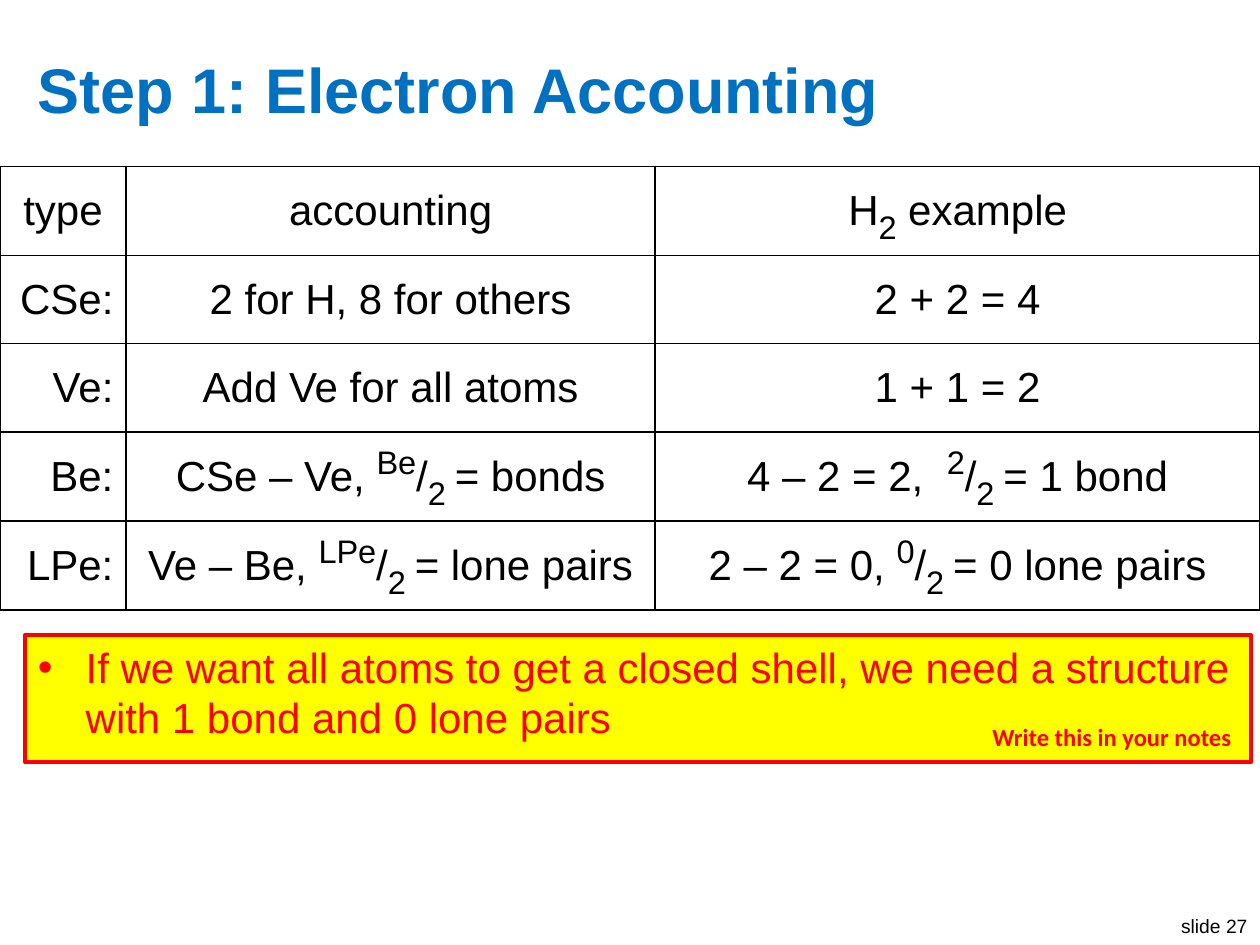
from lxml import etree
from pptx import Presentation
from pptx.dml.color import RGBColor
from pptx.enum import shapes, text
from pptx.oxml import ns
from pptx.util import Inches, Pt

BLACK, WHITE, RED, YELLOW, BLUE = "000000", "FFFFFF", "FF0000", "FFFF00", "0070C0"
LEFT, CENTER, RIGHT = text.PP_ALIGN.LEFT, text.PP_ALIGN.CENTER, text.PP_ALIGN.RIGHT

# A run starting with ^ is raised, one starting with _ is lowered
BASELINES = {"^": "30000", "_": "-25000"}
COLUMNS = [1, 4.2, 4.8]
ROW_HEIGHT = 0.7
ROWS = [
    (["type"], ["accounting"], ["H", "_2", " example"]),
    (["CSe:"], ["2 for H, 8 for others"], ["2 + 2 = 4"]),
    (["Ve:"], ["Add Ve for all atoms"], ["1 + 1 = 2"]),
    (["Be:"], ["CSe – Ve, ", "^Be", "/", "_2 ", "= bonds"],
     ["4 – 2 = 2,  ", "^2", "/", "_2 ", "= 1 bond"]),
    (["LPe:"], ["Ve – Be, ", "^LPe", "/", "_2 ", "= lone pairs"],
     ["2 – 2 = 0, ", "^0", "/", "_2 ", "= 0 lone pairs"]),
]


def rgb(color):
    return RGBColor.from_string(color)


def place(sp, box):
    sp.left, sp.top, sp.width, sp.height = (Inches(v) for v in box)


def fill(target, color):
    target.fill.solid()
    target.fill.fore_color.rgb = rgb(color)


def format_run(r, size, color, font="Arial", bold=False):
    r.font.size, r.font.name, r.font.bold = Pt(size), font, bold
    r.font.color.rgb = rgb(color)


def write(tf, words, size, color, align=LEFT, font="Arial", bold=False):
    tf.text = words
    p = tf.paragraphs[0]
    p.alignment = align
    format_run(p.runs[0], size, color, font, bold)
    return p


def add_title(slide, box):
    sp = slide.shapes.title
    place(sp, box)
    tf = sp.text_frame
    write(tf, "Step 1: Electron Accounting", 36, BLUE, bold=True)
    tf.vertical_anchor = text.MSO_ANCHOR.MIDDLE
    tf.auto_size = text.MSO_AUTO_SIZE.NONE


def set_borders(cell):
    tc_pr = cell._tc.get_or_add_tcPr()
    for i, side in enumerate(("lnL", "lnR", "lnT", "lnB")):
        ln = etree.Element(ns.qn(f"a:{side}"), w=str(Pt(1)))
        solid = etree.SubElement(ln, ns.qn("a:solidFill"))
        etree.SubElement(solid, ns.qn("a:srgbClr"), val=BLACK)
        tc_pr.insert(i, ln)


def fill_cell(cell, parts, align):
    cell.vertical_anchor = text.MSO_ANCHOR.MIDDLE
    fill(cell, WHITE)
    set_borders(cell)
    p = cell.text_frame.paragraphs[0]
    p.alignment = align
    for part in parts:
        baseline = BASELINES.get(part[0])
        r = p.add_run()
        r.text = part[1:] if baseline else part
        format_run(r, 32 if baseline else 24, BLACK)
        if baseline:
            r.font._element.set("baseline", baseline)


def add_accounting_table(slide, left, top):
    frame = slide.shapes.add_table(
        len(ROWS), len(COLUMNS), Inches(left), Inches(top),
        Inches(sum(COLUMNS)), Inches(ROW_HEIGHT * len(ROWS)))
    table = frame.table
    table.first_row = table.horz_banding = False
    for column, width in zip(table.columns, COLUMNS):
        column.width = Inches(width)
    for i, row in enumerate(ROWS):
        for j, parts in enumerate(row):
            align = RIGHT if i and j == 0 else CENTER
            fill_cell(table.cell(i, j), parts, align)


def add_conclusion(slide, box):
    sp = slide.placeholders[1]
    place(sp, box)
    fill(sp, YELLOW)
    sp.line.color.rgb = rgb(RED)
    sp.line.width = Pt(2.25)
    tf = sp.text_frame
    tf.auto_size = text.MSO_AUTO_SIZE.NONE
    p = write(tf, "If we want all atoms to get a closed shell, we need a "
              "structure with 1 bond and 0 lone pairs", 24, RED)
    p.space_before = Pt(12)
    # Hanging bullet
    p_pr = p._p.get_or_add_pPr()
    p_pr.set("marL", str(Inches(0.38)))
    p_pr.set("indent", str(Inches(-0.38)))
    etree.SubElement(p_pr, ns.qn("a:buFont"), typeface="Arial")
    etree.SubElement(p_pr, ns.qn("a:buChar"), char="•")


def add_notes_tag(slide, box):
    sp = slide.shapes.add_shape(shapes.MSO_SHAPE.RECTANGLE, *(Inches(v) for v in box))
    sp.shadow.inherit = False
    fill(sp, YELLOW)
    sp.line.fill.background()
    tf = sp.text_frame
    tf.word_wrap = True
    tf.vertical_anchor = text.MSO_ANCHOR.TOP
    write(tf, "Write this in your notes", 14, RED, CENTER, "Calibri", True)


def add_slide_number(slide, box):
    sp = slide.shapes.add_textbox(*(Inches(v) for v in box))
    sp.text_frame.word_wrap = False
    write(sp.text_frame, "slide 27", 11, BLACK, RIGHT)


def main():
    prs = Presentation()
    prs.slide_width, prs.slide_height = Inches(10), Inches(7.5)
    slide = prs.slides.add_slide(prs.slide_layouts[1])
    add_slide_number(slide, (9.25, 7.21, 0.75, 0.29))
    add_title(slide, (0.2, 0.3, 9.6, 0.8))
    add_conclusion(slide, (0.2, 5.04, 9.73, 1.01))
    add_accounting_table(slide, 0, 1.32)
    add_notes_tag(slide, (7.76, 5.68, 2.13, 0.34))
    prs.save("out.pptx")


if __name__ == "__main__":
    main()
